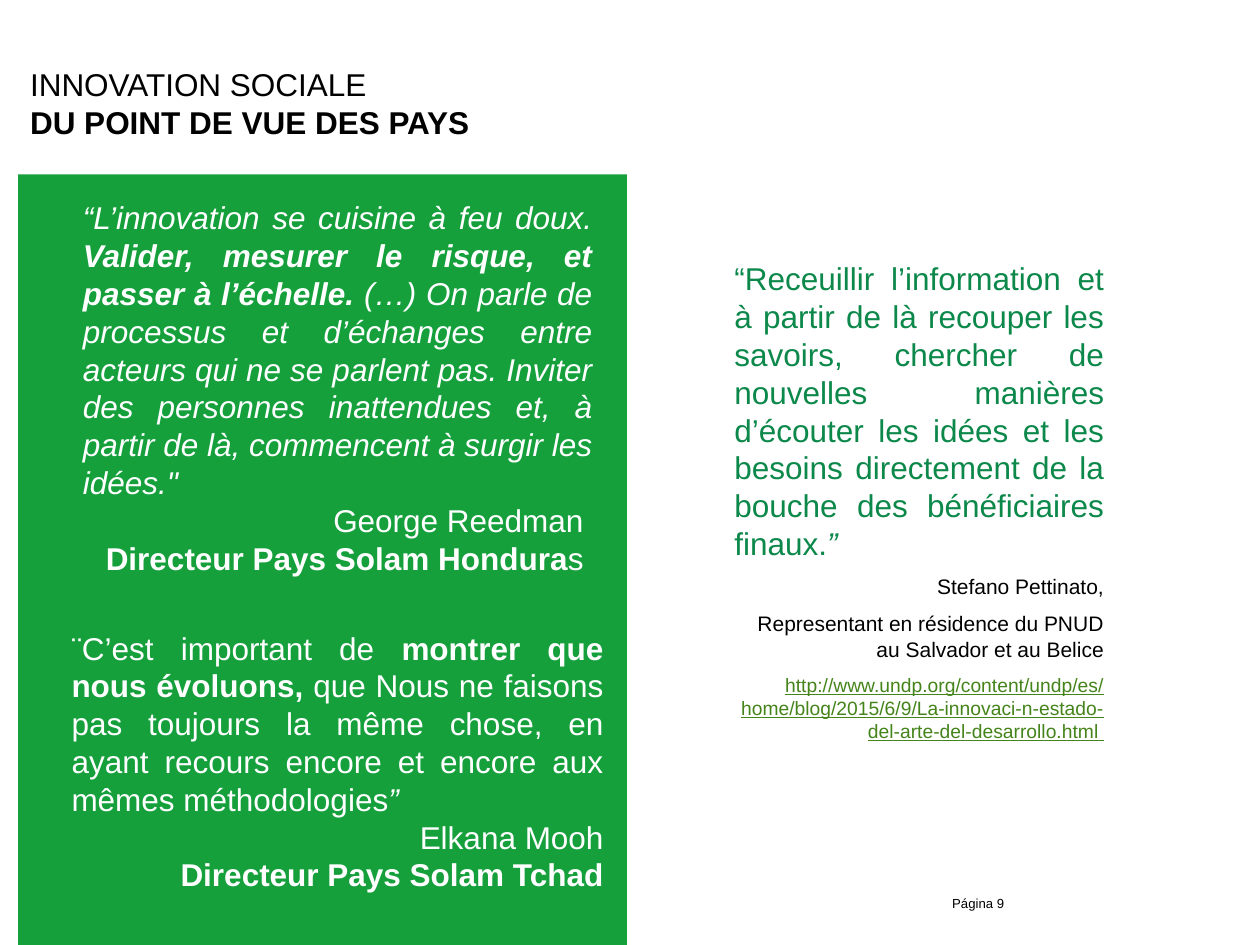
from dataclasses import dataclass
from typing import NamedTuple

from pptx import Presentation
from pptx.dml.color import RGBColor
from pptx.enum.shapes import MSO_SHAPE
from pptx.enum.text import MSO_ANCHOR, PP_ALIGN
from pptx.util import Pt


@dataclass(frozen=True)
class Theme:
    font: str = "Arial"
    black: str = "000000"
    white: str = "FFFFFF"
    panel_green: str = "15A03C"
    quote_green: str = "0C884A"
    link_green: str = "44841A"
    quote_size: float = 18
    source_size: float = 12
    link_size: float = 11
    page_size: float = 7.5


THEME = Theme()


class Box(NamedTuple):
    left: float
    top: float
    width: float
    height: float

    def lengths(self) -> list:
        return [Pt(value) for value in self]


class Run(NamedTuple):
    text: str
    bold: bool = False
    italic: bool = False
    underline: bool = False


class Line(NamedTuple):
    runs: list[Run]
    align: PP_ALIGN = PP_ALIGN.LEFT
    size: float = THEME.quote_size
    color: str = THEME.black
    space_before: float = 0


def add_panel(slide, box: Box, color: str) -> None:
    shape = slide.shapes.add_shape(MSO_SHAPE.RECTANGLE, *box.lengths())
    shape.shadow.inherit = False
    shape.fill.solid()
    shape.fill.fore_color.rgb = RGBColor.from_string(color)
    shape.line.fill.background()


def add_run(paragraph, text: str, *, size: float, color: str, bold: bool = False,
            italic: bool = False, underline: bool = False) -> None:
    run = paragraph.add_run()
    run.text = text
    font = run.font
    font.name = THEME.font
    font.size = Pt(size)
    font.color.rgb = RGBColor.from_string(color)
    font.bold, font.italic, font.underline = bold, italic, underline


def add_text(slide, box: Box, lines: list[Line], *, wrap: bool = True,
             anchor: MSO_ANCHOR = MSO_ANCHOR.TOP, fill: str = "") -> None:
    shape = slide.shapes.add_textbox(*box.lengths())
    if fill:
        shape.fill.solid()
        shape.fill.fore_color.rgb = RGBColor.from_string(fill)
    frame = shape.text_frame
    frame.word_wrap = wrap
    frame.vertical_anchor = anchor
    for index, line in enumerate(lines):
        paragraph = frame.add_paragraph() if index else frame.paragraphs[0]
        paragraph.alignment = line.align
        if line.space_before:
            paragraph.space_before = Pt(line.space_before)
        for run in line.runs:
            add_run(paragraph, run.text, size=line.size, color=line.color,
                    bold=run.bold, italic=run.italic, underline=run.underline)


def quote(*runs: Run, color: str = THEME.white) -> Line:
    return Line(list(runs), PP_ALIGN.JUSTIFY, color=color)


def speaker(*runs: Run) -> Line:
    return Line(list(runs), PP_ALIGN.RIGHT, color=THEME.white)


def source(run: Run, size: float = THEME.source_size, color: str = THEME.black) -> Line:
    return Line([run], PP_ALIGN.RIGHT, size, color, space_before=6.8)


def main() -> None:
    presentation = Presentation()
    presentation.slide_width, presentation.slide_height = Pt(720), Pt(540)
    slide = presentation.slides.add_slide(presentation.slide_layouts[6])

    # Page number
    add_text(slide, Box(537, 508.3, 96.5, 13),
             [Line([Run("Página 9")], size=THEME.page_size)])

    # Quote on the right
    add_text(slide, Box(412.6, 144.7, 225.4, 308.9), [
        quote(Run("“Receuillir l’information et à partir de là recouper les savoirs, "
                  "chercher de nouvelles manières d’écouter les idées et les besoins "
                  "directement de la bouche des bénéficiaires finaux."),
              Run("”", italic=True), color=THEME.quote_green),
        source(Run("Stefano Pettinato,")),
        source(Run("Representant en résidence du PNUD au Salvador et au Belice")),
        source(Run("http://www.undp.org/content/undp/es/home/blog/2015/6/9/"
                   "La-innovaci-n-estado-del-arte-del-desarrollo.html ", underline=True),
               THEME.link_size, THEME.link_green),
    ], fill=THEME.white)

    # Green panel with two quotes
    add_panel(slide, Box(10.4, 99.6, 347.8, 440.4), THEME.panel_green)
    add_text(slide, Box(40.3, 108.7, 305.3, 225.4), [
        quote(Run("“L’innovation se cuisine à feu doux. ", italic=True),
              Run("Valider, mesurer le risque, et passer à l’échelle. ",
                  bold=True, italic=True),
              Run("(…) On parle de processus et d’échanges entre acteurs qui ne se "
                  "parlent pas. Inviter des personnes inattendues et, à partir de là, "
                  "commencent à surgir les idées.\"", italic=True)),
        speaker(Run("George Reedman ")),
        speaker(Run("Directeur Pays Solam Hondura", bold=True), Run("s ")),
    ], anchor=MSO_ANCHOR.MIDDLE)
    add_text(slide, Box(33.8, 355.7, 318.2, 159.8), [
        quote(Run("¨C’est important de "),
              Run("montrer que nous évoluons, ", bold=True),
              Run("que Nous ne faisons pas toujours la même chose, en ayant recours "
                  "encore et encore aux mêmes méthodologies"),
              Run("”", italic=True)),
        speaker(Run("Elkana Mooh")),
        speaker(Run("Directeur Pays Solam Tchad", bold=True)),
    ])

    # Title
    add_text(slide, Box(10.1, 33.8, 267.8, 51.1), [
        Line([Run("INNOVATION SOCIALE")]),
        Line([Run("DU POINT DE VUE DES PAYS", bold=True)]),
    ], wrap=False)

    presentation.save("out.pptx")


if __name__ == "__main__":
    main()
